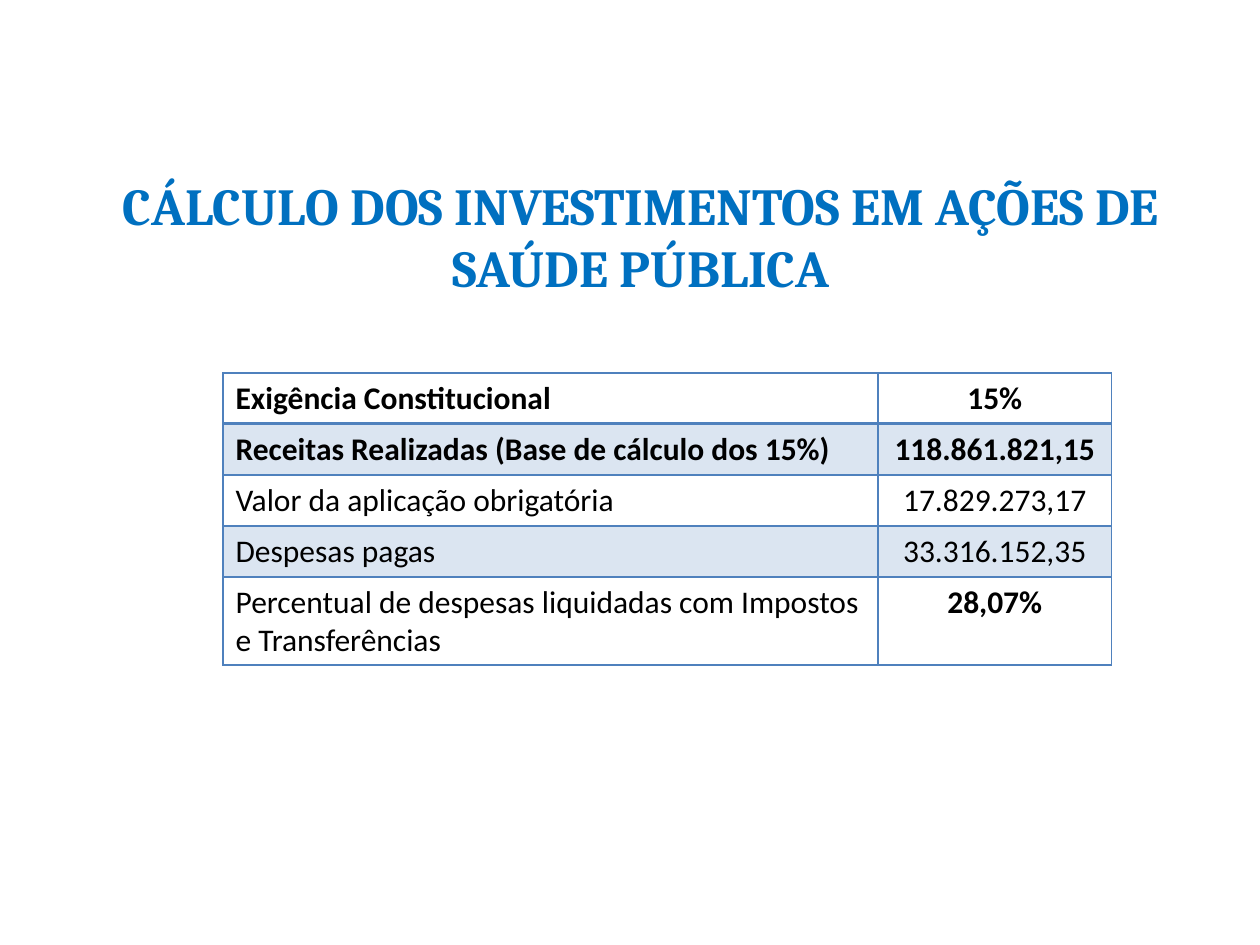
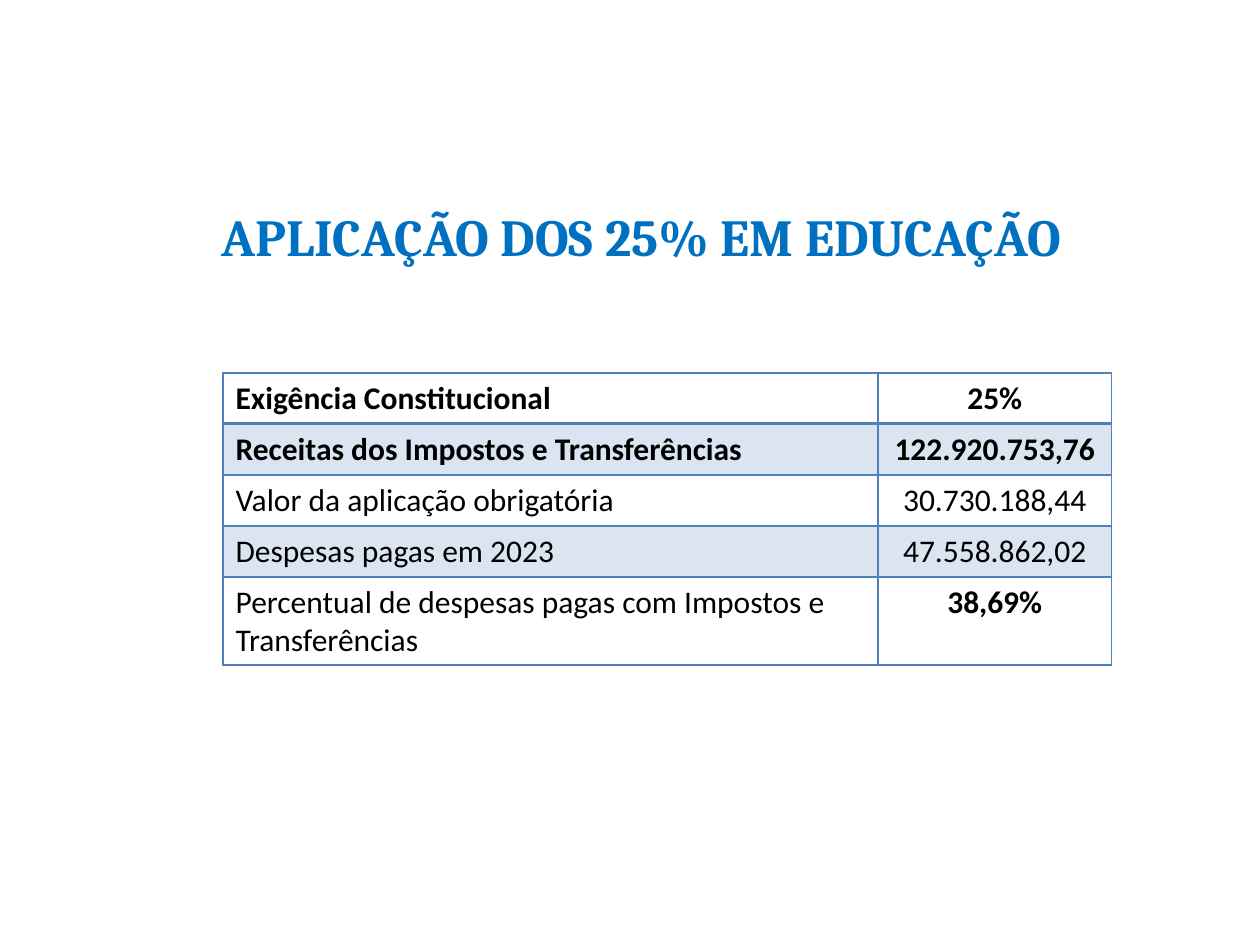
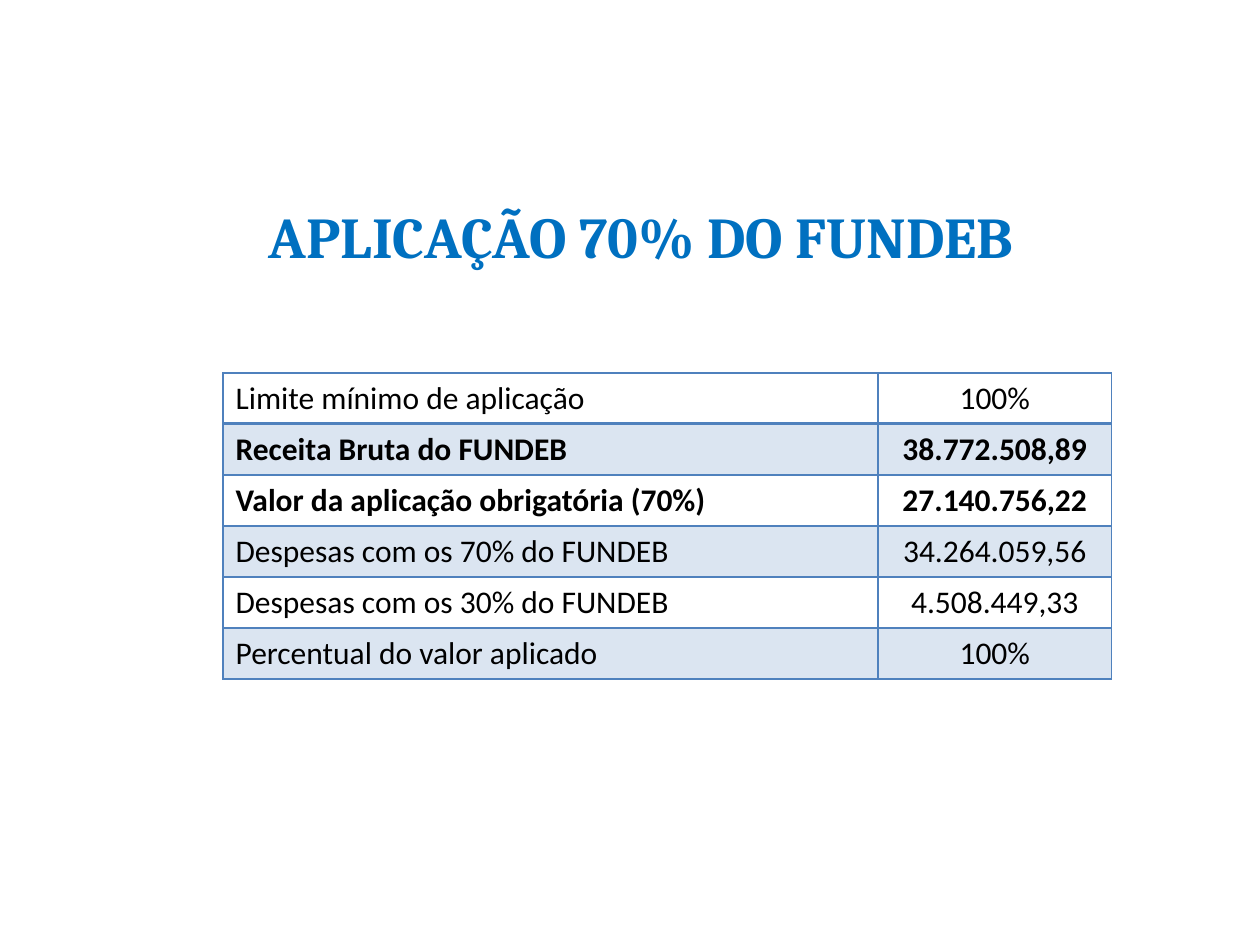
from lxml.etree import SubElement as Sub
from pptx import Presentation
from pptx.dml.color import RGBColor as RGB
from pptx.enum.text import MSO_ANCHOR as Anchor, PP_ALIGN as Align
from pptx.oxml.ns import qn
from pptx.util import Inches, Pt

BLUE = RGB(0x00, 0x70, 0xC0)
STEEL = RGB(0x4F, 0x81, 0xBD)
BLACK = RGB(0x00, 0x00, 0x00)

TOPICS = [
    ("CÁLCULO DOS INVESTIMENTOS EM AÇÕES DE SAÚDE PÚBLICA", 29.7, [
        ("Exigência Constitucional", "15%", True, True),
        ("Receitas Realizadas (Base de cálculo dos 15%)", "118.861.821,15", True, True),
        ("Valor da aplicação obrigatória", "17.829.273,17", False, False),
        ("Despesas pagas", "33.316.152,35", False, False),
        ("Percentual de despesas liquidadas com Impostos e Transferências",
         "28,07%", False, True),
    ]),
    ("APLICAÇÃO DOS 25% EM EDUCAÇÃO", 29.7, [
        ("Exigência Constitucional", "25%", True, True),
        ("Receitas dos Impostos e Transferências", "122.920.753,76", True, True),
        ("Valor da aplicação obrigatória", "30.730.188,44", False, False),
        ("Despesas pagas em 2023", "47.558.862,02", False, False),
        ("Percentual de despesas pagas com Impostos e Transferências",
         "38,69%", False, True),
    ]),
    ("APLICAÇÃO 70% DO FUNDEB", 33, [
        ("Limite mínimo de aplicação", "100%", False, False),
        ("Receita Bruta do FUNDEB", "38.772.508,89", True, True),
        ("Valor da aplicação obrigatória (70%)", "27.140.756,22", True, True),
        ("Despesas com os 70% do FUNDEB", "34.264.059,56", False, False),
        ("Despesas com os 30% do FUNDEB", "4.508.449,33", False, False),
        ("Percentual do valor aplicado", "100%", False, False),
    ]),
]


class Deck:
    """Holds the shared style and the current slide."""

    def __init__(self):
        self.show = Presentation()
        self.show.slide_width, self.show.slide_height = Inches(10), Inches(7.5)
        self.slide = None

    def page(self):
        """Start a blank slide."""
        self.slide = self.show.slides.add_slide(self.show.slide_layouts[6])

    def label(self, para, text, face, size, color, bold, align):
        """Fill one paragraph and set its font."""
        para.text, para.alignment = text, align
        font = para.font
        font.name, font.size, font.bold = face, Pt(size), bold
        font.color.rgb = color

    def title(self, text, size):
        """Add the centred heading."""
        box = self.slide.shapes.add_textbox(
            Inches(0.59), Inches(0.76), Inches(9), Inches(1.5))
        frame = box.text_frame
        frame.word_wrap, frame.vertical_anchor = True, Anchor.MIDDLE
        frame.margin_top, frame.margin_bottom = Inches(0.72), 0
        self.label(frame.paragraphs[0], text, "Cambria", size, BLUE, True, Align.CENTER)

    def edge(self, cell, side, width):
        """Draw one border of a cell."""
        props = cell._tc.get_or_add_tcPr()
        line = Sub(props, qn(f"a:ln{side}"), w=str(Pt(width)))
        Sub(Sub(line, qn("a:solidFill")), qn("a:srgbClr"), val=str(STEEL))

    def shade(self, cell, band):
        """Tint a banded cell and leave any other clear."""
        if not band:
            cell.fill.background()
            return
        cell.fill.solid()
        cell.fill.fore_color.rgb = STEEL
        tint = cell._tc.tcPr.find(qn("a:solidFill")).find(qn("a:srgbClr"))
        Sub(tint, qn("a:alpha"), val="20000")

    def table(self, rows):
        """Add the two-column table of labels and values."""
        high = Inches(0.405)
        grid = self.slide.shapes.add_table(
            len(rows), 2, Inches(1.77), Inches(2.96), Inches(7.05), high * len(rows)).table
        grid.first_row = grid.horz_banding = False
        grid.columns[0].width, grid.columns[1].width = Inches(5.2), Inches(1.85)
        for r, (name, value, *bolds) in enumerate(rows):
            grid.rows[r].height = high
            top, base = (2 if r == 1 else 1), (2 if r == 0 else 1)
            trios = zip((name, value), bolds, (Align.LEFT, Align.CENTER))
            for c, (text, bold, align) in enumerate(trios):
                cell = grid.cell(r, c)
                self.label(cell.text_frame.paragraphs[0], text, "Calibri", 18,
                           BLACK, bold, align)
                for side, width in zip("LRTB", (1, 1, top, base)):
                    self.edge(cell, side, width)
                self.shade(cell, r % 2 == 1)


def main():
    """Build the three slides."""
    deck = Deck()
    for head, size, rows in TOPICS:
        deck.page()
        deck.title(head, size)
        deck.table(rows)
    deck.show.save("out.pptx")


if __name__ == "__main__":
    main()
